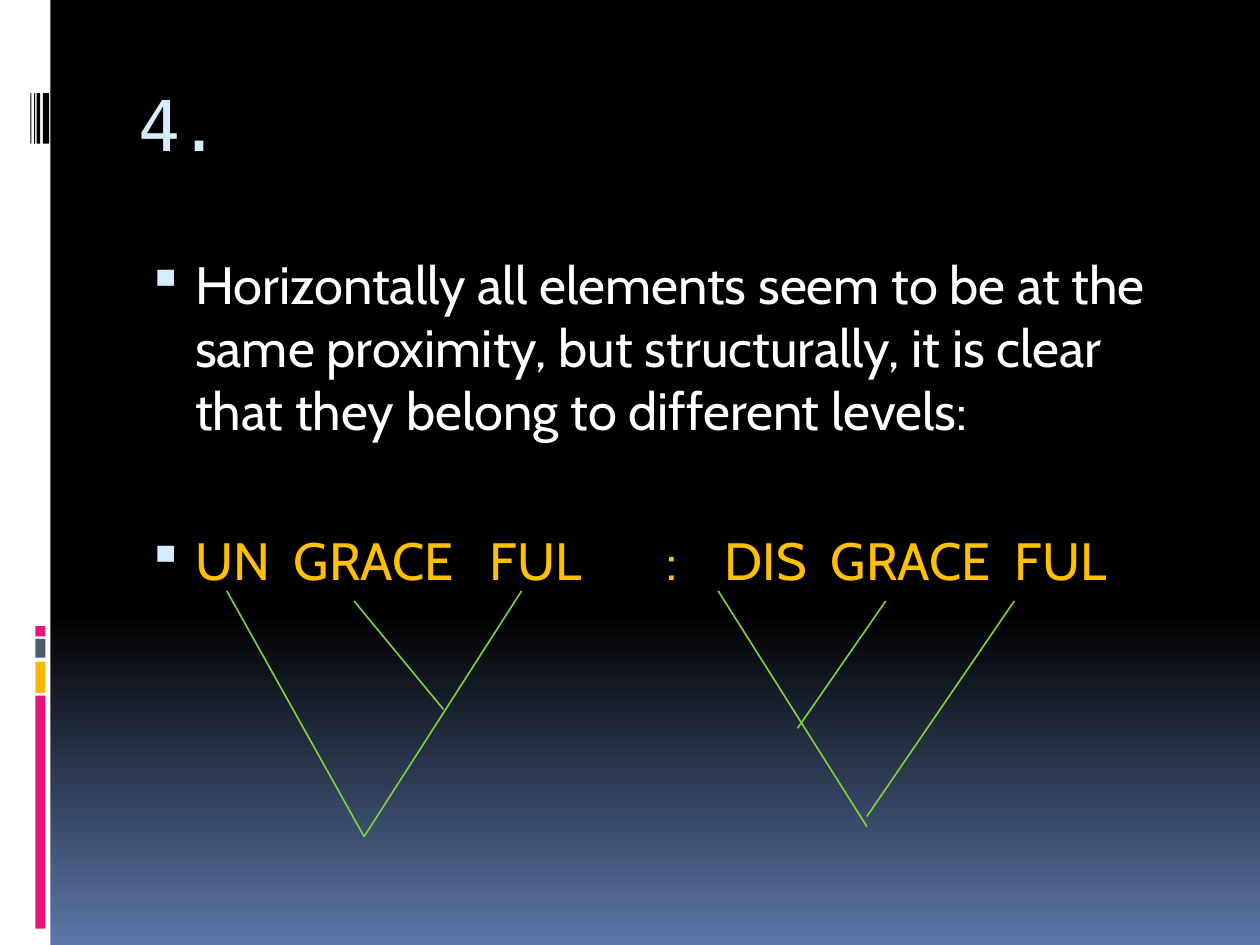
from typing import Any, NamedTuple

import pptx
import pptx.dml.color
import pptx.enum.shapes
import pptx.enum.text
import pptx.oxml.ns
import pptx.util
from lxml import etree

Inches = pptx.util.Inches
Pt = pptx.util.Pt
RGBColor = pptx.dml.color.RGBColor

BLACK = RGBColor(0x00, 0x00, 0x00)
WHITE = RGBColor(0xFF, 0xFF, 0xFF)
DUSK_BLUE = RGBColor(0x5B, 0x77, 0xA8)
PALE_BLUE = RGBColor(0xD6, 0xEC, 0xFF)
PINK = RGBColor(0xEA, 0x15, 0x7A)
AMBER = RGBColor(0xFE, 0xB8, 0x0A)
SLATE = RGBColor(0x4E, 0x5B, 0x6F)
GOLD = RGBColor(0xFF, 0xC0, 0x00)
GREEN = RGBColor(0x7F, 0xD1, 0x3B)

SPACE_WIDTH = 6.9


class Bar(NamedTuple):
    left: float
    top: float
    width: float
    height: float
    color: RGBColor


class Branch(NamedTuple):
    x1: float
    y1: float
    x2: float
    y2: float


class Morpheme(NamedTuple):
    text: str
    gap: int


SIDE_BARS = [
    Bar(0, 0, 0.4, 7.5, WHITE),
    *(Bar(0.28, top, 0.08, height, color) for top, height, color in (
        (5.52, 1.85, PINK), (5.25, 0.25, AMBER),
        (5.07, 0.15, SLATE), (4.97, 0.08, PINK))),
    *(Bar(left, 0.74, width, 0.4, BLACK) for left, width in (
        (0.34, 0.05), (0.29, 0.03), (0.27, 0.01), (0.24, 0.01))),
]

BRANCHES = [
    Branch(1.8, 4.69, 2.89, 6.64),
    Branch(4.14, 4.69, 2.89, 6.64),
    Branch(2.81, 4.77, 3.52, 5.63),
    Branch(5.7, 4.69, 6.88, 6.56),
    Branch(8.05, 4.77, 6.88, 6.48),
    Branch(7.03, 4.77, 6.33, 5.78),
]

STATEMENT = ("Horizontally all elements seem to be at the same proximity, "
             "but structurally, it is clear that they belong to different levels:")

MORPHEMES = [
    Morpheme("UN", 2), Morpheme("GRACE", 3), Morpheme("FUL", 7), Morpheme(":", 4),
    Morpheme("DIS", 2), Morpheme("GRACE", 2), Morpheme("FUL", 0),
]

TITLE_PLACE = dict(left=Inches(1), top=Inches(0.56), width=Inches(8.5), height=Inches(1))
TITLE_FRAME = dict(word_wrap=True, margin_top=Inches(0.09),
                   vertical_anchor=pptx.enum.text.MSO_ANCHOR.TOP)
TITLE_FONT = dict(name="DejaVu Sans Mono", size=Pt(40))
BODY_FONT = dict(name="Cabin", size=Pt(30))


def apply(target: Any, values: dict[str, Any]) -> None:
    for key, value in values.items():
        setattr(target, key, value)


def add_run(paragraph: Any, text: str, font: dict[str, Any], color: RGBColor,
            spacing: float = 0) -> None:
    run = paragraph.add_run()
    run.text = text
    apply(run.font, font)
    run.font.color.rgb = color
    if spacing:
        run.font._element.set("spc", str(round(spacing * 100)))


def add_bar(slide: Any, bar: Bar) -> None:
    rectangle = slide.shapes.add_shape(
        pptx.enum.shapes.MSO_SHAPE.RECTANGLE,
        *(Inches(length) for length in bar[:4]))
    rectangle.shadow.inherit = False
    rectangle.fill.solid()
    rectangle.fill.fore_color.rgb = bar.color
    rectangle.line.fill.background()


def add_branch(slide: Any, branch: Branch) -> None:
    connector = slide.shapes.add_connector(
        pptx.enum.shapes.MSO_CONNECTOR.STRAIGHT,
        *(Inches(length) for length in branch))
    connector.line.color.rgb = GREEN
    connector.line.width = Pt(0.94)
    etree.SubElement(connector._element.spPr, pptx.oxml.ns.qn("a:effectLst"))


def set_bullet(paragraph: Any, space_before: float) -> None:
    paragraph.space_before = Pt(space_before)
    properties = paragraph._p.get_or_add_pPr()
    properties.set("marL", str(Inches(0.45)))
    properties.set("indent", str(Inches(-0.38)))
    qn = pptx.oxml.ns.qn
    bullet_color = etree.SubElement(properties, qn("a:buClr"))
    etree.SubElement(bullet_color, qn("a:srgbClr"), val=str(PALE_BLUE))
    etree.SubElement(properties, qn("a:buSzPct"), val="95000")
    etree.SubElement(properties, qn("a:buChar"), char="▪")


def paint_background(slide: Any) -> None:
    fill = slide.background.fill
    fill.gradient()
    fill.gradient_angle = 270
    for stop, (position, color) in zip(fill.gradient_stops, ((0.65, BLACK), (1, DUSK_BLUE))):
        stop.position = position
        stop.color.rgb = color


def write_title(slide: Any) -> None:
    title = slide.shapes.title
    apply(title, TITLE_PLACE)
    apply(title.text_frame, TITLE_FRAME)
    heading = title.text_frame.paragraphs[0]
    heading.alignment = pptx.enum.text.PP_ALIGN.LEFT
    add_run(heading, "4.", TITLE_FONT, PALE_BLUE, spacing=-1)


def write_body(slide: Any) -> None:
    body = slide.shapes.add_textbox(Inches(1), Inches(1.95), Inches(8.5), Inches(5))
    body.text_frame.word_wrap = True
    statement = body.text_frame.paragraphs[0]
    set_bullet(statement, 7)
    add_run(statement, STATEMENT, BODY_FONT, WHITE)
    example = body.text_frame.add_paragraph()
    set_bullet(example, 50)
    for morpheme in MORPHEMES:
        add_run(example, morpheme.text, BODY_FONT, GOLD)
        if morpheme.gap:
            add_run(example, " ", BODY_FONT, GOLD, spacing=(morpheme.gap - 1) * SPACE_WIDTH)


def main() -> None:
    presentation = pptx.Presentation()
    apply(presentation, dict(slide_width=Inches(10), slide_height=Inches(7.5)))
    slide = presentation.slides.add_slide(presentation.slide_layouts.get_by_name("Title Only"))
    paint_background(slide)
    for bar in SIDE_BARS:
        add_bar(slide, bar)
    write_title(slide)
    write_body(slide)
    for branch in BRANCHES:
        add_branch(slide, branch)
    presentation.save("out.pptx")


if __name__ == "__main__":
    main()
